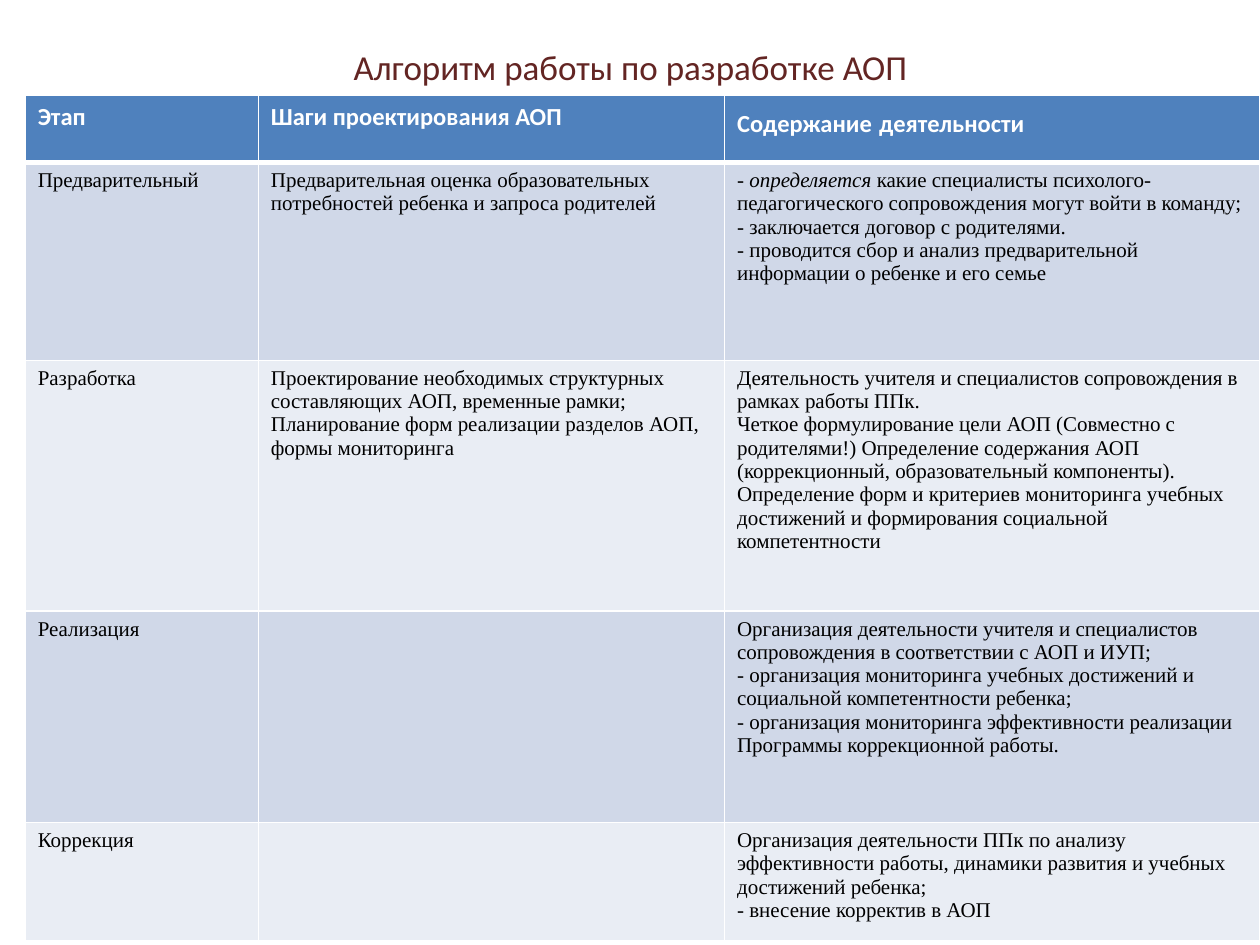
from dataclasses import dataclass

from lxml import etree
from pptx import Presentation
from pptx import util as u
from pptx.dml.color import RGBColor
from pptx.enum import text
from pptx.oxml import ns

COLORS = {
    "title": "632523",
    "header": "4F81BD",
    "odd": "D0D8E8",
    "even": "E9EDF4",
    "white": "FFFFFF",
    "black": "000000",
}
COLUMNS = (1.85, 3.7, 4.25)
ROWS = (0.53, 1.57, 1.99, 1.68, 0.94)
TABLE_LEFT, TABLE_TOP = 0.2, 0.76


@dataclass(frozen=True)
class Style:
    font: str
    size: float
    color: str
    bold: bool = False


@dataclass(frozen=True)
class Span:
    words: str
    italic: bool = False
    size: float | None = None


@dataclass(frozen=True)
class Stage:
    name: str
    steps: str
    content: tuple[tuple[Span, ...], ...]


TITLE = Style("Calibri", 20, "title")
HEADER = Style("Calibri", 14, "white", True)
BODY = Style("Times New Roman", 12, "black")


def lines(*items: str) -> tuple[tuple[Span, ...], ...]:
    return tuple((Span(item),) for item in items)


HEADINGS = (
    lines("Этап"),
    lines("Шаги проектирования АОП"),
    ((Span("Содержание"), Span(" ", size=18), Span("деятельности")),),
)
STAGES = (
    Stage(
        "Предварительный",
        "Предварительная оценка образовательных потребностей ребенка и запроса родителей",
        (
            (
                Span("- "),
                Span("определяется ", italic=True),
                Span("какие специалисты психолого-педагогического сопровождения "
                     "могут войти в команду;"),
            ),
            (Span("- заключается договор с родителями."),),
            (
                Span("- ", italic=True),
                Span("проводится сбор и анализ предварительной информации "
                     "о ребенке и его семье"),
            ),
        ),
    ),
    Stage(
        "Разработка",
        "Проектирование необходимых структурных составляющих АОП, временные рамки; "
        "Планирование форм реализации разделов АОП, формы мониторинга",
        lines(
            "Деятельность учителя и специалистов сопровождения в рамках работы ППк.",
            "Четкое формулирование цели АОП (Совместно с родителями!) "
            "Определение содержания АОП (коррекционный, образовательный компоненты). "
            "Определение форм и критериев мониторинга учебных достижений "
            "и формирования социальной компетентности",
        ),
    ),
    Stage(
        "Реализация",
        "",
        lines(
            "Организация деятельности учителя и специалистов сопровождения "
            "в соответствии с АОП и ИУП;",
            "- организация мониторинга учебных достижений "
            "и социальной компетентности ребенка;",
            "- организация мониторинга эффективности реализации "
            "Программы коррекционной работы.",
        ),
    ),
    Stage(
        "Коррекция",
        "",
        lines(
            "Организация деятельности ППк по анализу эффективности работы, "
            "динамики развития и учебных достижений ребенка;",
            "- внесение корректив в АОП",
        ),
    ),
)


def write(frame, paragraphs: tuple[tuple[Span, ...], ...], style: Style) -> None:
    for index, spans in enumerate(paragraphs):
        para = frame.add_paragraph() if index else frame.paragraphs[0]
        for span in spans:
            run = para.add_run()
            run.text = span.words
            run.font.name = style.font
            run.font.size = u.Pt(span.size or style.size)
            run.font.bold = style.bold
            run.font.italic = span.italic
            run.font.color.rgb = RGBColor.from_string(COLORS[style.color])


def add_borders(cell, bottom: float) -> None:
    properties = cell._tc.get_or_add_tcPr()
    for side, width in (("L", 1), ("R", 1), ("T", 1), ("B", bottom)):
        line = etree.SubElement(properties, ns.qn(f"a:ln{side}"), w=str(u.Pt(width)))
        solid = etree.SubElement(line, ns.qn("a:solidFill"))
        etree.SubElement(solid, ns.qn("a:srgbClr"), val=COLORS["white"])


def fill_row(cells, contents, style: Style, fill: str, bottom: float = 1) -> None:
    for cell, paragraphs in zip(cells, contents):
        add_borders(cell, bottom)
        cell.fill.solid()
        cell.fill.fore_color.rgb = RGBColor.from_string(COLORS[fill])
        write(cell.text_frame, paragraphs, style)


def add_title(page) -> None:
    box = page.shapes.title
    box.left, box.top = u.Inches(0.51), u.Inches(0.3)
    box.width, box.height = u.Inches(8.99), u.Inches(0.46)
    frame = box.text_frame
    frame.auto_size = text.MSO_AUTO_SIZE.NONE
    frame.vertical_anchor = text.MSO_ANCHOR.MIDDLE
    write(frame, lines("Алгоритм работы по разработке АОП"), TITLE)
    frame.paragraphs[0].alignment = text.PP_ALIGN.CENTER


def add_stages(page) -> None:
    table = page.shapes.add_table(
        len(ROWS), len(COLUMNS), u.Inches(TABLE_LEFT), u.Inches(TABLE_TOP),
        u.Inches(sum(COLUMNS)), u.Inches(sum(ROWS)),
    ).table
    for column, width in zip(table.columns, COLUMNS):
        column.width = u.Inches(width)
    for row, height in zip(table.rows, ROWS):
        row.height = u.Inches(height)
    header, *body = table.rows
    fill_row(header.cells, HEADINGS, HEADER, "header", bottom=3)
    for index, (row, stage) in enumerate(zip(body, STAGES)):
        steps = lines(stage.steps) if stage.steps else ()
        contents = (lines(stage.name), steps, stage.content)
        fill_row(row.cells, contents, BODY, "even" if index % 2 else "odd")


def main() -> None:
    deck = Presentation()
    deck.slide_width, deck.slide_height = u.Inches(10), u.Inches(7.5)
    page = deck.slides.add_slide(deck.slide_layouts.get_by_name("Title Only"))
    add_title(page)
    add_stages(page)
    deck.save("out.pptx")


if __name__ == "__main__":
    main()
